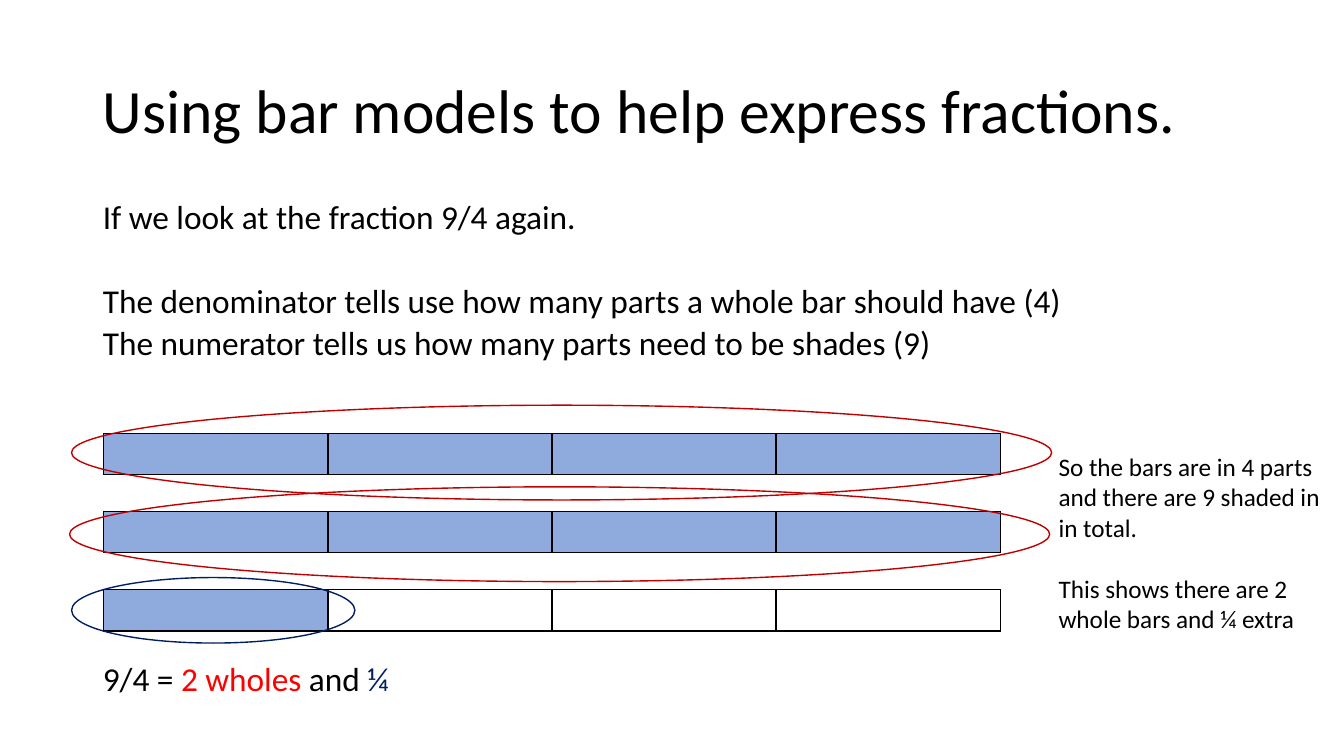
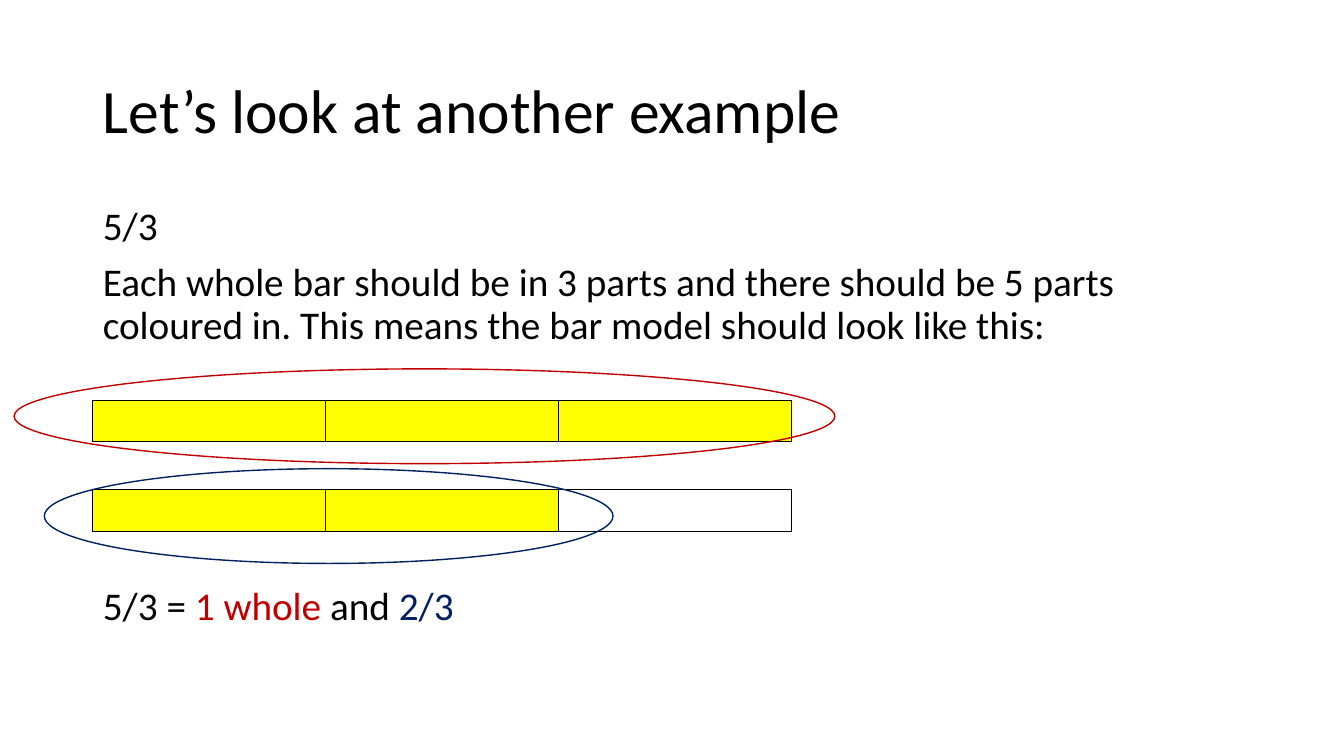
from dataclasses import dataclass

from lxml import etree
from pptx import Presentation
from pptx.dml.color import RGBColor
from pptx.enum import shapes, text
from pptx.oxml.ns import qn
from pptx.util import Pt

EMU_PER_PX = 9144


@dataclass(frozen=True)
class Theme:
    font: str = "Calibri"
    black: str = "000000"
    red: str = "FF0000"
    crimson: str = "C00000"
    navy: str = "002060"
    blue: str = "8FAADC"
    yellow: str = "FFFF00"
    title_size: float = 44
    side_size: float = 18
    line_width: float = 1


THEME = Theme()
SLIDE_SIZE = (1333, 750)
TITLE_BOX = (92, 40, 1150, 145)
BAR_HEIGHT = 41

SLIDES = [
    {
        "title": "Using bar models to help express fractions.",
        "body": {
            "box": (92, 200, 1150, 527), "size": 23.8, "line_spacing": 0.7,
            "paragraphs": [
                (10, [("If we look at the fraction 9/4 again.", THEME.black)]),
                (40, [("The denominator tells use how many parts a whole bar should have (4)", THEME.black)]),
                (10, [("The numerator tells us how many parts need to be shades (9)", THEME.black)]),
                (220, [("9/4 = ", THEME.black), ("2 wholes ", THEME.red),
                       ("and ", THEME.black), ("¼", THEME.navy)]),
            ],
        },
        "bars": {"left": 103, "top": 430, "width": 889, "pitch": 77.5,
                 "parts": 4, "shaded": [4, 4, 1], "color": THEME.blue},
        "rings": [((71, 402, 972, 94), THEME.crimson),
                  ((69, 483, 972, 94), THEME.crimson),
                  ((71, 573, 281, 65), THEME.navy)],
        "side": {
            "box": (1040, 443, 288, 192), "size": THEME.side_size, "line_spacing": 1.0,
            "paragraphs": [
                (0, [("So the bars are in 4 parts and there are 9 shaded in in total.", THEME.black)]),
                (22, [("This shows there are 2 whole bars and ¼ extra", THEME.black)]),
            ],
        },
    },
    {
        "title": "Let’s look at another example",
        "body": {
            "box": (92, 200, 1150, 476), "size": 28, "line_spacing": 0.9,
            "paragraphs": [
                (10, [("5/3", THEME.black)]),
                (10, [("Each whole bar should be in 3 parts and there should be 5 parts coloured in. "
                       "This means the bar model should look like this:", THEME.black)]),
                (171, [("5/3 = ", THEME.black), ("1 whole ", THEME.crimson),
                       ("and ", THEME.black), ("2/3", THEME.navy)]),
            ],
        },
        "bars": {"left": 92, "top": 397, "width": 693, "pitch": 89,
                 "parts": 3, "shaded": [3, 2], "color": THEME.yellow},
        "rings": [((14, 366, 814, 94), THEME.crimson),
                  ((44, 465, 564, 94), THEME.navy)],
    },
]


def px(*lengths):
    return [round(length * EMU_PER_PX) for length in lengths]


def apply(target, values):
    for name, value in values.items():
        setattr(target, name, value)


def write_text(shape, block, anchor=text.MSO_ANCHOR.TOP):
    apply(shape, dict(zip(("left", "top", "width", "height"), px(*block["box"]))))
    frame = shape.text_frame
    apply(frame, {"word_wrap": True, "auto_size": text.MSO_AUTO_SIZE.NONE,
                  "vertical_anchor": anchor})
    for index, (space_before, runs) in enumerate(block["paragraphs"]):
        paragraph = frame.add_paragraph() if index else frame.paragraphs[0]
        apply(paragraph, {"alignment": text.PP_ALIGN.LEFT,
                          "line_spacing": block["line_spacing"],
                          "space_before": Pt(space_before), "space_after": Pt(0)})
        properties = paragraph._p.get_or_add_pPr()
        properties.set("marL", "0")
        properties.set("indent", "0")
        etree.SubElement(properties, qn("a:buNone"))
        for words, color in runs:
            run = paragraph.add_run()
            run.text = words
            apply(run.font, {"name": THEME.font, "size": Pt(block["size"])})
            run.font.color.rgb = RGBColor.from_string(color)


def add_cell_borders(cell):
    properties = cell._tc.get_or_add_tcPr()
    for index, side in enumerate(("lnL", "lnR", "lnT", "lnB")):
        line = etree.Element(qn(f"a:{side}"), w=str(Pt(THEME.line_width)))
        fill = etree.SubElement(line, qn("a:solidFill"))
        etree.SubElement(fill, qn("a:srgbClr"), val=THEME.black)
        properties.insert(index, line)


def add_bars(slide, bars):
    for row, shaded in enumerate(bars["shaded"]):
        top = bars["top"] + row * bars["pitch"]
        box = px(bars["left"], top, bars["width"], BAR_HEIGHT)
        table = slide.shapes.add_table(1, bars["parts"], *box).table
        apply(table, {"first_row": False, "horz_banding": False})
        for part, cell in enumerate(table.iter_cells()):
            if part < shaded:
                cell.fill.solid()
                cell.fill.fore_color.rgb = RGBColor.from_string(bars["color"])
            else:
                cell.fill.background()
            add_cell_borders(cell)


def add_ring(slide, box, color):
    ring = slide.shapes.add_shape(shapes.MSO_SHAPE.OVAL, *px(*box))
    ring.shadow.inherit = False
    ring.fill.background()
    ring.line.width = Pt(THEME.line_width)
    ring.line.color.rgb = RGBColor.from_string(color)


def build_slide(presentation, content):
    slide = presentation.slides.add_slide(presentation.slide_layouts[1])
    title = {"box": TITLE_BOX, "size": THEME.title_size, "line_spacing": 0.9,
             "paragraphs": [(0, [(content["title"], THEME.black)])]}
    write_text(slide.shapes.title, title, text.MSO_ANCHOR.MIDDLE)
    write_text(slide.placeholders[1], content["body"])
    add_bars(slide, content["bars"])
    if "side" in content:
        side = content["side"]
        write_text(slide.shapes.add_textbox(*px(*side["box"])), side)
    for box, color in content["rings"]:
        add_ring(slide, box, color)


def main():
    presentation = Presentation()
    apply(presentation, dict(zip(("slide_width", "slide_height"), px(*SLIDE_SIZE))))
    for content in SLIDES:
        build_slide(presentation, content)
    presentation.save("out.pptx")


if __name__ == "__main__":
    main()
